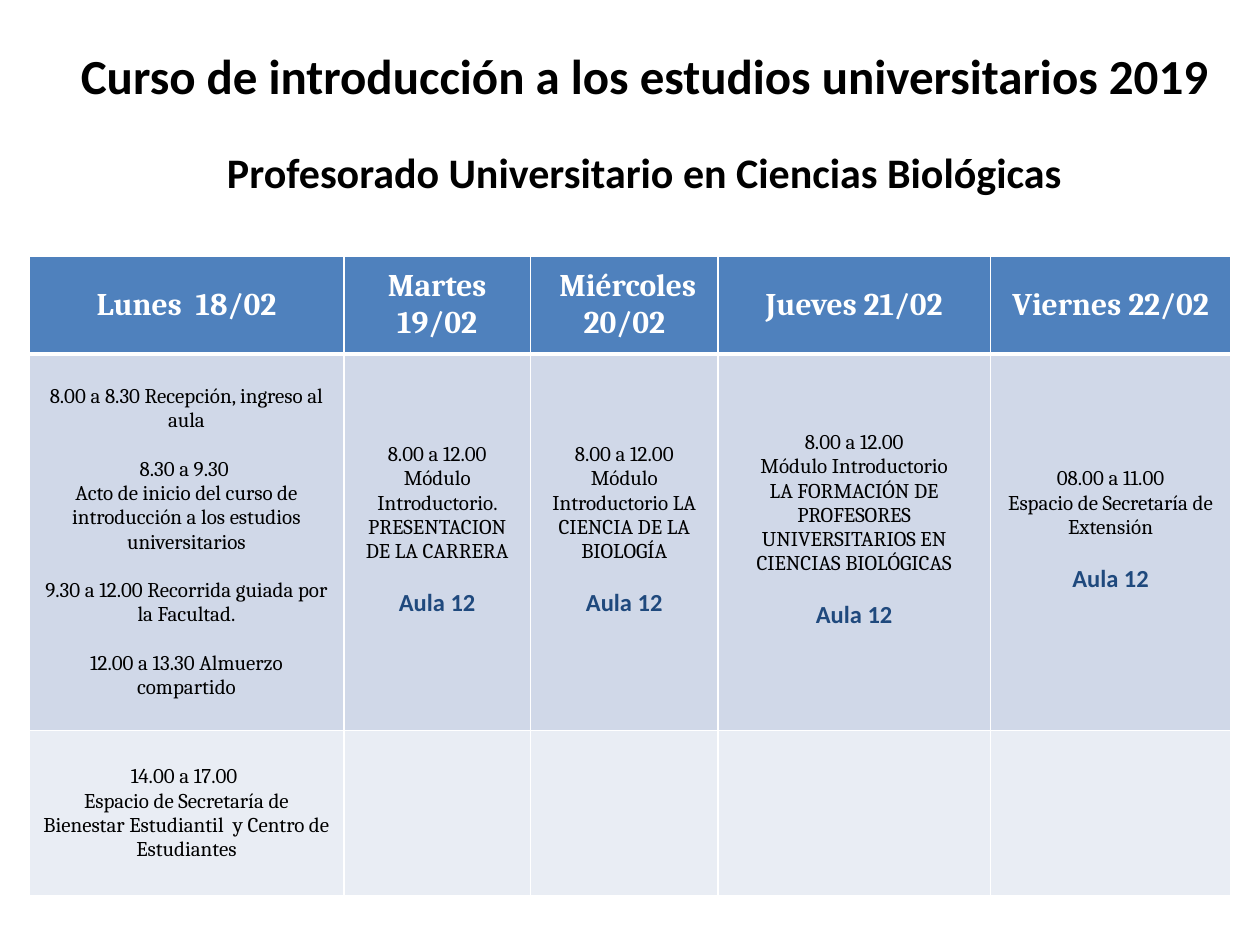
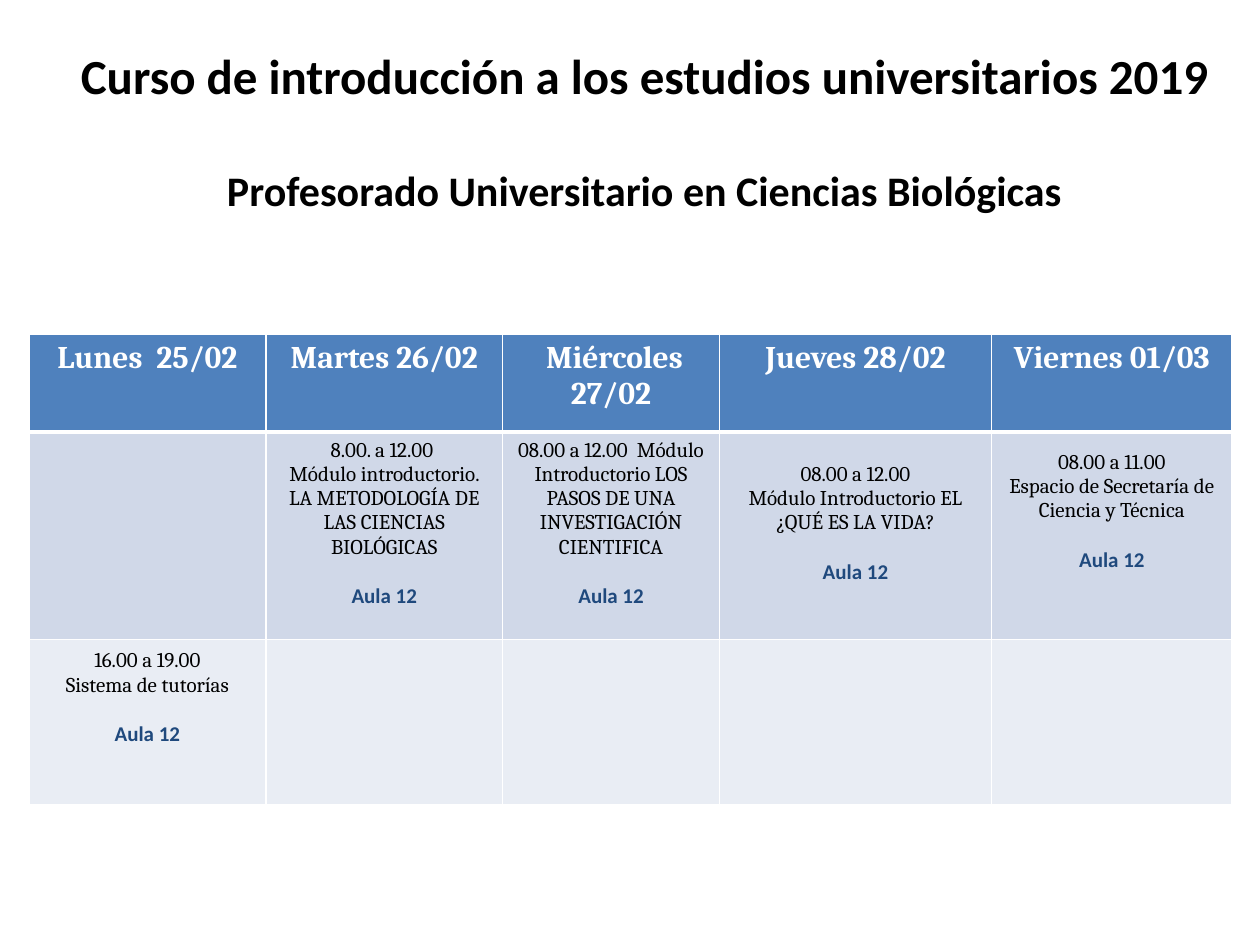
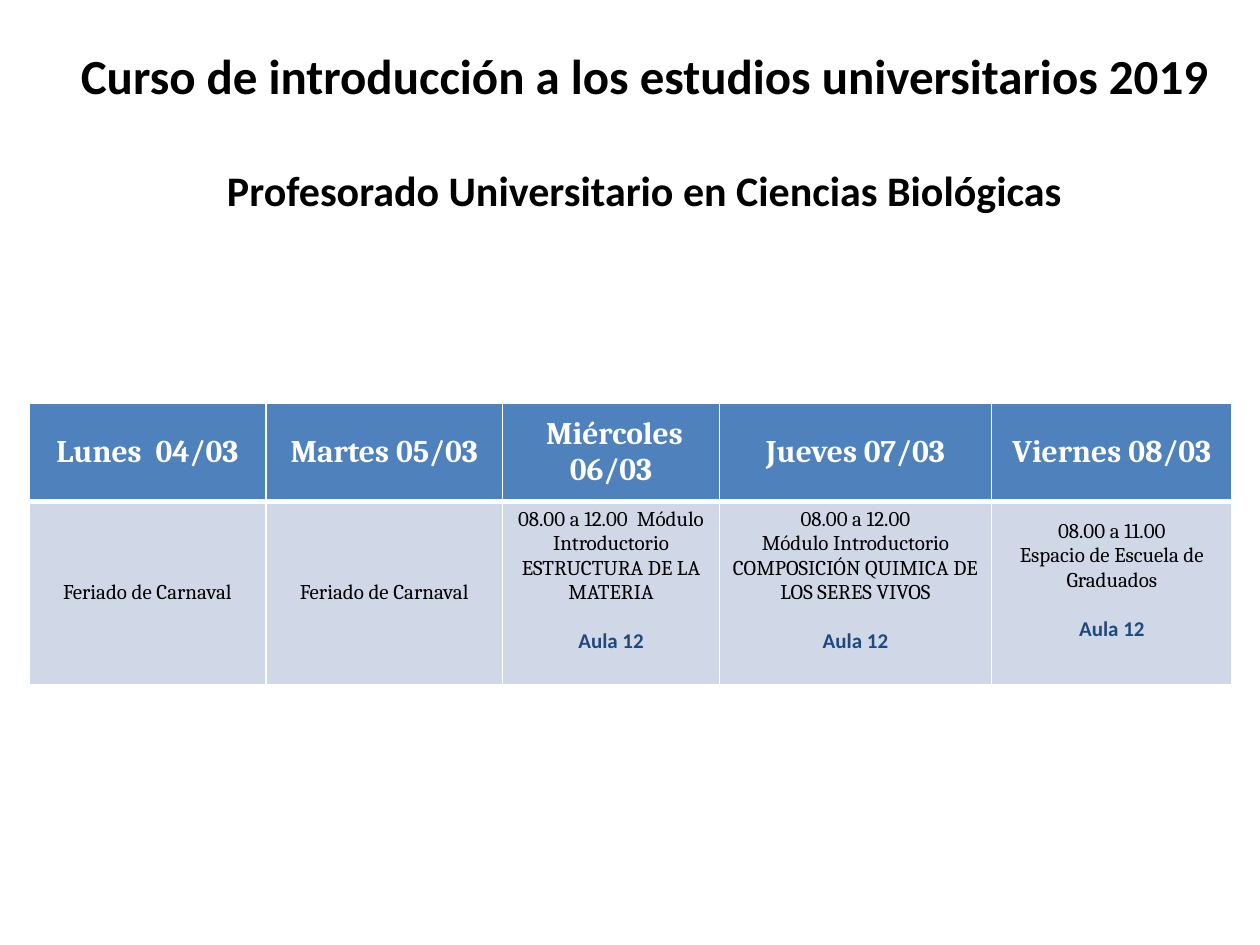
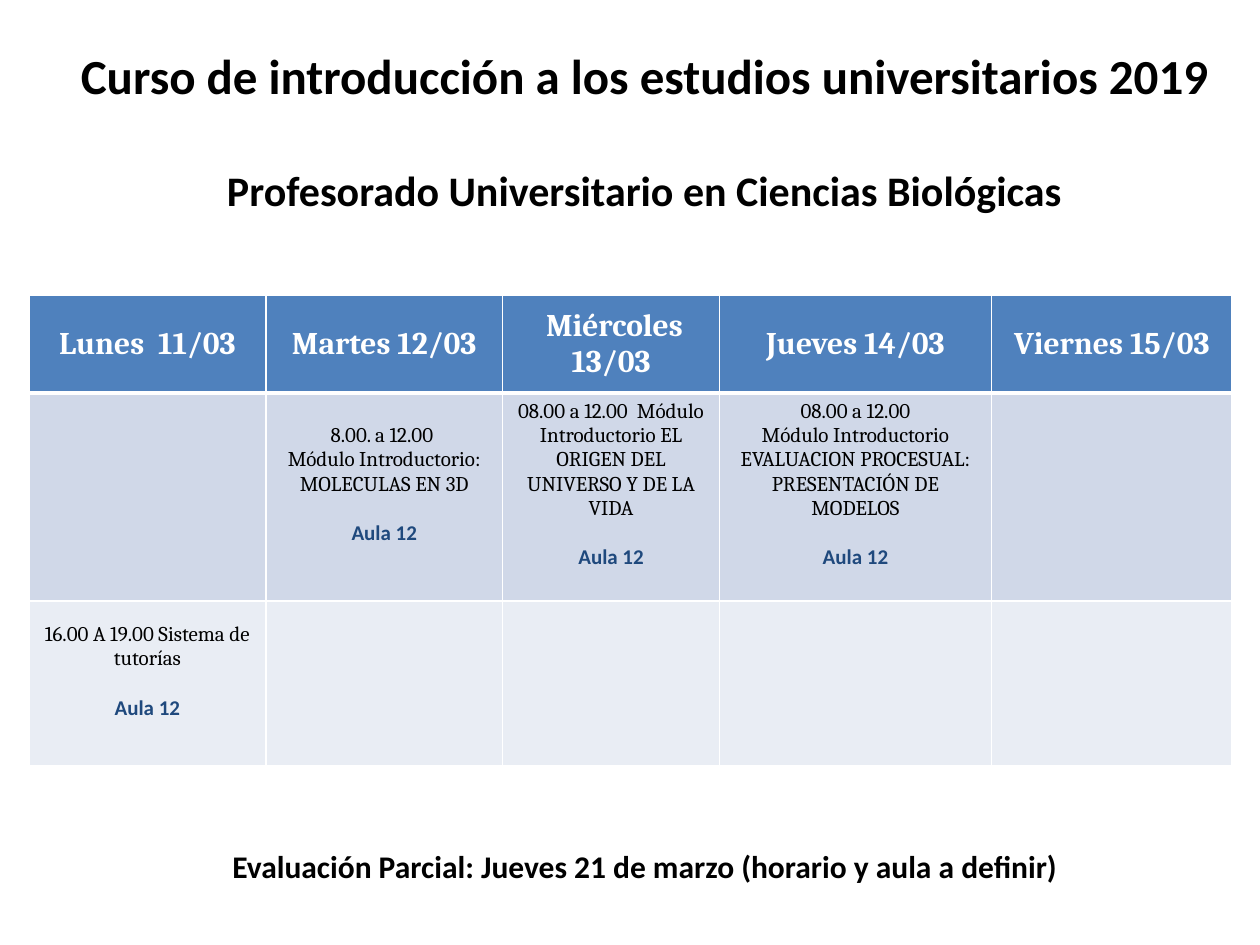
"""Build the four weekly timetables of the 2019 introductory course."""
import lxml.etree
import pptx
import pptx.dml.color
import pptx.enum.text
import pptx.oxml.ns
import pptx.util

Inches = pptx.util.Inches
Pt = pptx.util.Pt
MIDDLE = pptx.enum.text.MSO_ANCHOR.MIDDLE
TOP = pptx.enum.text.MSO_ANCHOR.TOP

COLORS = {"text": "000000", "white": "FFFFFF", "header": "4F81BD",
          "morning": "D0D8E8", "afternoon": "E9EDF4", "room": "1F497D"}
BANDS = ["header", "morning", "afternoon"]
COURSE = "Curso de introducción a los estudios universitarios 2019"
DEGREE = "Profesorado Universitario en Ciencias Biológicas"
ROOM = "Aula 12"
LINE_HEIGHT = 0.19
WIDE_MONDAY = [2.5, 1.48, 1.49, 2.16, 1.91]
EVEN_DAYS = [1.88, 1.88, 1.72, 2.16, 1.91]

WEEKS = [
    {"top": 2.03, "columns": WIDE_MONDAY, "rows": [0.78, 2.99, 1.31],
     "title_height": 1.31, "title_gap": 24.4, "room_size": 14,
     "cells": [
         ["Lunes  18/02", "Martes 19/02", " Miércoles 20/02", "Jueves 21/02", "Viernes 22/02"],
         ["8.00 a 8.30 Recepción, ingreso al aula\n\n"
          "8.30 a 9.30 \nActo de inicio del curso de introducción a los estudios universitarios\n\n"
          "9.30 a 12.00 Recorrida guiada por la Facultad.\n\n"
          "12.00 a 13.30 Almuerzo compartido",
          "8.00 a 12.00 Módulo Introductorio. PRESENTACION DE LA CARRERA\n\nAula 12",
          "8.00 a 12.00\nMódulo Introductorio LA CIENCIA DE LA BIOLOGÍA\n\nAula 12",
          "8.00 a 12.00\nMódulo Introductorio\n"
          "LA FORMACIÓN DE PROFESORES UNIVERSITARIOS EN CIENCIAS BIOLÓGICAS\n\nAula 12",
          "08.00 a 11.00\nEspacio de Secretaría de Extensión\n\nAula 12"],
         ["14.00 a 17.00 \nEspacio de Secretaría de Bienestar Estudiantil  y Centro de Estudiantes",
          "", "", "", ""]]},
    {"top": 2.65, "columns": EVEN_DAYS, "rows": [0.78, 1.64, 1.31],
     "title_height": 1.63, "header_anchor": TOP, "lines_below": {(1, 4): 2, (2, 0): 2},
     "cells": [
         ["Lunes  25/02", "Martes 26/02", " Miércoles 27/02", "Jueves 28/02", "Viernes 01/03"],
         ["",
          "8.00. a 12.00 \nMódulo introductorio. LA METODOLOGÍA DE LAS CIENCIAS BIOLÓGICAS\n\nAula 12",
          "08.00 a 12.00  Módulo Introductorio LOS PASOS DE UNA INVESTIGACIÓN CIENTIFICA\n\nAula 12",
          "08.00 a 12.00\nMódulo Introductorio EL ¿QUÉ ES LA VIDA?\n\nAula 12",
          "08.00 a 11.00\nEspacio de Secretaría de Ciencia y Técnica\n\nAula 12"],
         ["16.00 a 19.00\nSistema de tutorías\n\nAula 12", "", "", "", ""]]},
    {"top": 3.2, "columns": EVEN_DAYS, "rows": [0.78, 1.45], "title_height": 1.85,
     "cells": [
         ["Lunes  04/03", "Martes 05/03", " Miércoles 06/03", "Jueves 07/03", "Viernes 08/03"],
         ["Feriado de Carnaval", "Feriado de Carnaval",
          "08.00 a 12.00  Módulo Introductorio ESTRUCTURA DE LA MATERIA\n\nAula 12",
          "08.00 a 12.00\nMódulo Introductorio COMPOSICIÓN QUIMICA DE LOS SERES VIVOS\n\nAula 12",
          "08.00 a 11.00\nEspacio de Escuela de Graduados\n\nAula 12"]]},
    {"top": 2.34, "columns": EVEN_DAYS, "rows": [0.78, 1.65, 1.31], "title_height": 1.45,
     "notice": "Evaluación Parcial: Jueves 21 de marzo (horario y aula a definir)",
     "cells": [
         ["Lunes  11/03", "Martes 12/03", " Miércoles 13/03", "Jueves 14/03", "Viernes 15/03"],
         ["",
          "8.00. a 12.00 \nMódulo Introductorio:\nMOLECULAS EN 3D\n\nAula 12",
          "08.00 a 12.00  Módulo Introductorio EL ORIGEN DEL UNIVERSO Y DE LA VIDA\n\nAula 12",
          "08.00 a 12.00\nMódulo Introductorio\n"
          "EVALUACION PROCESUAL: PRESENTACIÓN DE MODELOS\n\nAula 12",
          ""],
         ["16.00 A 19.00 Sistema de tutorías\n\nAula 12", "", "", "", ""]]},
]


def write(frame, text, size=12, font="Calibri", color="text", bold=True, gap=0):
    """Add one centred paragraph, using the first one while the frame is empty."""
    paragraph = frame.add_paragraph() if frame.text else frame.paragraphs[0]
    paragraph.alignment = pptx.enum.text.PP_ALIGN.CENTER
    paragraph.space_before = Pt(gap)
    run = paragraph.add_run()
    run.text = text
    run.font.size = Pt(size)
    run.font.name = font
    run.font.bold = bold
    run.font.color.rgb = pptx.dml.color.RGBColor.from_string(COLORS[color])


def draw_borders(cell, widths):
    """Give a cell white borders, with a width in points for each side."""
    properties = cell._tc.get_or_add_tcPr()
    for side, width in widths.items():
        line = lxml.etree.SubElement(properties, pptx.oxml.ns.qn("a:ln" + side), w=str(Pt(width)))
        fill = lxml.etree.SubElement(line, pptx.oxml.ns.qn("a:solidFill"))
        lxml.etree.SubElement(fill, pptx.oxml.ns.qn("a:srgbClr"), val=COLORS["white"])


deck = pptx.Presentation()
deck.slide_width = Inches(10)
deck.slide_height = Inches(7.5)

for week in WEEKS:
    slide = deck.slides.add_slide(deck.slide_layouts[5])
    heading = slide.shapes.title
    heading.left, heading.top = Inches(0.23), Inches(0.31)
    heading.width, heading.height = Inches(9.77), Inches(week["title_height"])
    heading.text_frame.vertical_anchor = TOP
    heading.text_frame.auto_size = pptx.enum.text.MSO_AUTO_SIZE.NONE
    write(heading.text_frame, COURSE, size=28)
    write(heading.text_frame, DEGREE, size=24, gap=week.get("title_gap", 34.2))

    timetable = slide.shapes.add_table(
        len(week["rows"]), len(week["columns"]), Inches(0.23), Inches(week["top"]),
        Inches(sum(week["columns"])), Inches(sum(week["rows"]))).table
    for column, width in zip(timetable.columns, week["columns"]):
        column.width = Inches(width)

    for r, entries in enumerate(week["cells"]):
        timetable.rows[r].height = Inches(week["rows"][r])
        for c, entry in enumerate(entries):
            cell = timetable.cell(r, c)
            draw_borders(cell, {"L": 1, "R": 1, "T": 3 if r == 1 else 1, "B": 3 if r == 0 else 1})
            cell.fill.solid()
            cell.fill.fore_color.rgb = pptx.dml.color.RGBColor.from_string(COLORS[BANDS[r]])
            cell.vertical_anchor = MIDDLE
            if r == 0:
                cell.vertical_anchor = week.get("header_anchor", MIDDLE)
                write(cell.text_frame, entry, size=18, font="Cambria", color="white")
                continue
            if entry.endswith(ROOM):
                lines_below = week.get("lines_below", {}).get((r, c), 1)
                cell.margin_bottom = Inches(0.05 + LINE_HEIGHT * lines_below)
            for b, block in enumerate(entry.split("\n\n") if entry else []):
                for n, text in enumerate(block.split("\n")):
                    gap = 14 if b and n == 0 else 0
                    if text == ROOM:
                        write(cell.text_frame, text, size=week.get("room_size", 12),
                              color="room", gap=gap)
                    else:
                        write(cell.text_frame, text, font="Cambria", bold=False, gap=gap)

    if "notice" in week:
        notice = slide.shapes.add_textbox(Inches(1.38), Inches(6.67), Inches(7.48), Inches(0.4))
        notice.text_frame.word_wrap = True
        write(notice.text_frame, week["notice"], size=18)

deck.save("out.pptx")
